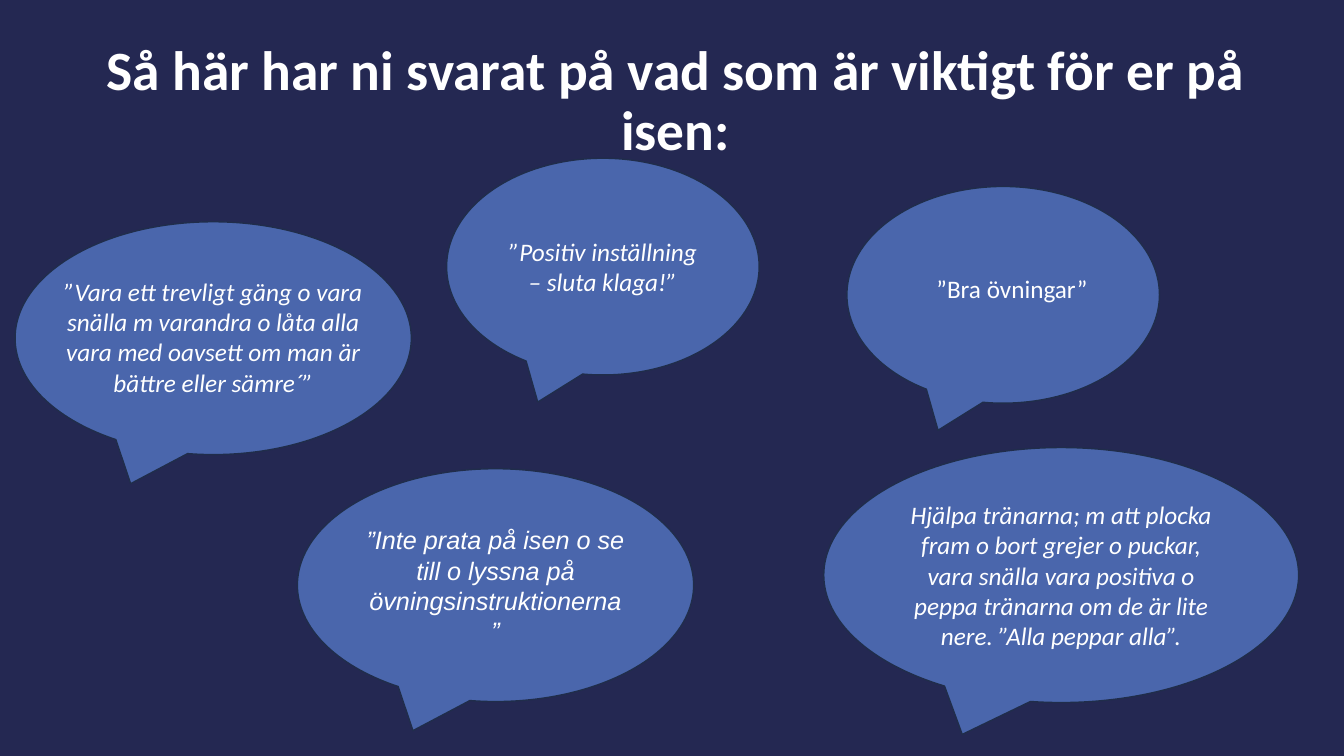
from dataclasses import dataclass

from pptx import Presentation
from pptx.dml.color import RGBColor
from pptx.enum import shapes, text
from pptx.util import Inches, Pt


@dataclass(frozen=True)
class Theme:
    back: RGBColor = RGBColor.from_string("242852")
    fill: RGBColor = RGBColor.from_string("4A66AC")
    edge: RGBColor = RGBColor.from_string("202D4B")
    ink: RGBColor = RGBColor.from_string("FFFFFF")
    head: Pt = Pt(39.6)
    body: Pt = Pt(18)


THEME = Theme()
FONT = "Calibri"
MID = text.PP_ALIGN.CENTER
LEFT = text.PP_ALIGN.LEFT

# Left, top, width, height, quote, font
QUOTES = [
    (4.43, 1.57, 3.1, 2.15, "”Positiv inställning – sluta klaga!”", FONT),
    (2.95, 4.65, 3.93, 2.31,
     "”Inte prata på isen o se till o lyssna på övningsinstruktionerna”", "Arial"),
    (8.17, 4.44, 4.71, 2.53,
     "Hjälpa tränarna; m att plocka fram o bort grejer o puckar, vara snälla "
     "vara positiva o peppa tränarna om de är lite nere. ”Alla peppar alla”.", FONT),
]


def write(frame, words, size=THEME.body, font=FONT, align=MID, bold=False, slant=False):
    frame.word_wrap = True
    frame.text = words
    para = frame.paragraphs[0]
    para.alignment = align
    face = para.font
    face.name, face.size = font, size
    face.bold, face.italic = bold, slant
    face.color.rgb = THEME.ink
    return para


def place(shape, *box):
    shape.left, shape.top, shape.width, shape.height = map(Inches, box)


def add_title(slide, words):
    title = slide.shapes.title
    place(title, 0.49, 0.29, 12.42, 1.45)
    title.text_frame.vertical_anchor = text.MSO_ANCHOR.MIDDLE
    para = write(title.text_frame, words, THEME.head, bold=True)
    para.line_spacing = 0.9


def add_bubble(slide, *box):
    bubble = slide.shapes.add_shape(
        shapes.MSO_SHAPE.OVAL_CALLOUT, *map(Inches, box))
    bubble.shadow.inherit = False
    bubble.fill.solid()
    bubble.fill.fore_color.rgb = THEME.fill
    bubble.line.color.rgb = THEME.edge
    bubble.line.width = Pt(1)
    bubble.text_frame.vertical_anchor = text.MSO_ANCHOR.MIDDLE
    return bubble


def add_label(slide, box, words, **style):
    label = slide.shapes.add_textbox(*map(Inches, box))
    write(label.text_frame, words, **style)
    label.text_frame.auto_size = text.MSO_AUTO_SIZE.SHAPE_TO_FIT_TEXT


def main():
    deck = Presentation()
    deck.slide_width, deck.slide_height = Inches(13.33), Inches(7.5)
    slide = deck.slides.add_slide(deck.slide_layouts[5])
    slide.background.fill.solid()
    slide.background.fill.fore_color.rgb = THEME.back

    add_title(slide, "Så här har ni svarat på vad som är viktigt för er på isen:")
    add_bubble(slide, 8.4, 1.85, 3.1, 2.15)
    add_label(slide, (9.19, 2.66, 6.67, 0.4), "”Bra övningar”", align=LEFT)
    add_bubble(slide, 0.15, 2.2, 3.93, 2.31)
    add_label(slide, (0.32, 2.69, 3.59, 1.31),
              "”Vara ett trevligt gäng o vara snälla m varandra o låta alla "
              "vara med oavsett om man är bättre eller sämre´”", slant=True)
    for *box, words, font in QUOTES:
        bubble = add_bubble(slide, *box)
        write(bubble.text_frame, words, font=font, slant=True)

    deck.save("out.pptx")


if __name__ == "__main__":
    main()
